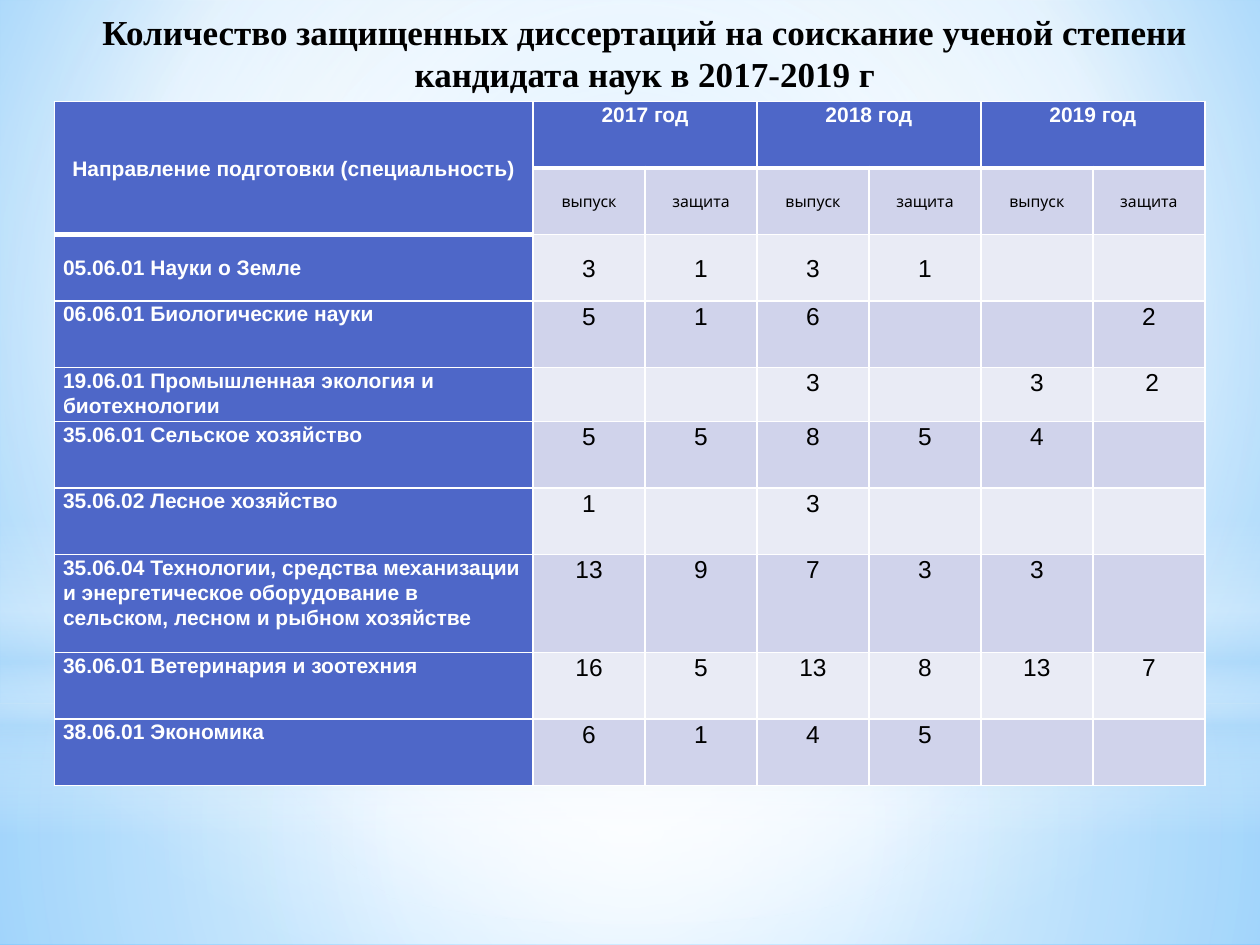
from dataclasses import dataclass

from lxml.etree import SubElement
from pptx import Presentation
from pptx.dml.color import RGBColor
from pptx.enum.shapes import MSO_SHAPE
from pptx.enum.text import MSO_ANCHOR, MSO_AUTO_SIZE, PP_ALIGN
from pptx.oxml.ns import qn
from pptx.util import Pt


@dataclass(frozen=True)
class Theme:
    """Colours, fonts and type sizes of the slide."""

    ink: str = "000000"
    white: str = "FFFFFF"
    header: str = "4E67C8"
    bands: tuple = ("E9EBF5", "D0D3EB")
    sky: str = "B4DCFA"
    sky_light: str = "9ED5FF"
    sky_deep: str = "5BB9FF"
    title_font: str = "Times New Roman"
    table_font: str = "Arial"
    caption_font: str = "Cabin"
    title_size: int = 20
    label_size: int = 12
    caption_size: int = 9
    value_size: int = 14
    thin: int = 1
    thick: int = 3


def write(frame, text, font, size, color, bold=False, align=PP_ALIGN.CENTER, spacing=None):
    """Put one formatted paragraph into a text frame."""
    para = frame.paragraphs[0]
    para.alignment = align
    para.line_spacing = spacing
    span = para.add_run()
    span.text = text
    span.font.name = font
    span.font.size = Pt(size)
    span.font.bold = bold
    span.font.color.rgb = RGBColor.from_string(color)


def paint_gradient(element, stops, focus=None):
    """Refill an element's gradient, circular around focus or else vertical."""
    gradient = element.find(".//" + qn("a:gradFill"))
    for child in list(gradient):
        gradient.remove(child)
    stop_list = SubElement(gradient, qn("a:gsLst"))
    for position, color, opacity in stops:
        stop = SubElement(stop_list, qn("a:gs"), pos=str(position * 1000))
        shade = SubElement(stop, qn("a:srgbClr"), val=color)
        if opacity < 100:
            SubElement(shade, qn("a:alpha"), val=str(opacity * 1000))
    if focus:
        path = SubElement(gradient, qn("a:path"), path="circle")
        edges = {side: str(share * 1000) for side, share in zip("ltrb", focus)}
        SubElement(path, qn("a:fillToRect"), **edges)
    else:
        SubElement(gradient, qn("a:lin"), ang="5400000", scaled="0")


class Painter:
    """Draws styled elements on the current slide."""

    def __init__(self, page, theme):
        """Keep the slide and its theme."""
        self.page = page
        self.theme = theme

    def background(self, stops, focus):
        """Fill the slide background with a circular gradient."""
        self.page.background.fill.gradient()
        paint_gradient(self.page.element, stops, focus)

    def glow(self, kind, left, top, width, height, stops, focus=None):
        """Add a borderless shape with a translucent gradient."""
        shape = self.page.shapes.add_shape(kind, Pt(left), Pt(top), Pt(width), Pt(height))
        shape.shadow.inherit = False
        shape.line.fill.background()
        shape.fill.gradient()
        paint_gradient(shape.element, stops, focus)

    def title(self, text, left, top, width, height):
        """Place the title placeholder in front of the backdrop."""
        box = self.page.shapes.title
        box.left, box.top, box.width, box.height = Pt(left), Pt(top), Pt(width), Pt(height)
        box.element.getparent().append(box.element)
        frame = box.text_frame
        frame.word_wrap = True
        frame.auto_size = MSO_AUTO_SIZE.SHAPE_TO_FIT_TEXT
        frame.vertical_anchor = MSO_ANCHOR.MIDDLE
        write(frame, text, self.theme.title_font, self.theme.title_size, self.theme.ink, bold=True)

    def borders(self, cell, top, bottom):
        """Draw white cell borders with the given top and bottom widths."""
        properties = cell._tc.get_or_add_tcPr()
        widths = {"lnL": self.theme.thin, "lnR": self.theme.thin, "lnT": top, "lnB": bottom}
        for tag, width in widths.items():
            line = SubElement(properties, qn("a:" + tag), w=str(Pt(width)))
            fill = SubElement(line, qn("a:solidFill"))
            SubElement(fill, qn("a:srgbClr"), val=self.theme.white)

    def cell(self, cell, row, column, text):
        """Style and fill one cell by its place in the table."""
        theme = self.theme
        header_rows = 2 if column == 0 else 1
        is_label = row < header_rows or column == 0
        self.borders(
            cell,
            top=theme.thick if row == header_rows else theme.thin,
            bottom=theme.thick if row < header_rows else theme.thin,
        )
        cell.fill.solid()
        cell.fill.fore_color.rgb = RGBColor.from_string(
            theme.header if is_label else theme.bands[row % 2]
        )
        cell.margin_left = cell.margin_right = Pt(5)
        cell.margin_top = cell.margin_bottom = 0
        is_middle = row in (1, 2) or (row, column) == (0, 0)
        cell.vertical_anchor = MSO_ANCHOR.MIDDLE if is_middle else MSO_ANCHOR.TOP
        if not text:
            return
        if is_label:
            font, size, color = theme.table_font, theme.label_size, theme.white
        elif row == 1:
            font, size, color = theme.caption_font, theme.caption_size, theme.ink
        else:
            font, size, color = theme.table_font, theme.value_size, theme.ink
        align = PP_ALIGN.CENTER
        if column == 0 and row > 1:
            align = PP_ALIGN.JUSTIFY if row == 2 else PP_ALIGN.LEFT
        write(cell.text_frame, text, font, size, color, bold=is_label, align=align, spacing=1.07)

    def table(self, rows, left, top, widths, heights):
        """Add the table with its two-level header."""
        frame = self.page.shapes.add_table(
            len(rows), len(widths), Pt(left), Pt(top), Pt(sum(widths)), Pt(sum(heights))
        )
        table = frame.table
        for column, width in zip(table.columns, widths):
            column.width = Pt(width)
        for line, height in zip(table.rows, heights):
            line.height = Pt(height)
        for row, texts in enumerate(rows):
            for column, text in enumerate(texts):
                self.cell(table.cell(row, column), row, column, text)
        table.cell(0, 0).merge(table.cell(1, 0))
        for column in range(1, len(widths), 2):
            table.cell(0, column).merge(table.cell(0, column + 1))


ROWS = [
    ["Направление подготовки (специальность)", "2017 год", "", "2018 год", "", "2019 год", ""],
    [""] + ["выпуск", "защита"] * 3,
    ["05.06.01 Науки о Земле", "3", "1", "3", "1", "", ""],
    ["06.06.01 Биологические науки", "5", "1", "6", "", "", "2"],
    ["19.06.01 Промышленная экология и биотехнологии", "", "", "3", "", "3", " 2"],
    ["35.06.01 Сельское хозяйство", "5", "5", "8", "5", "4", ""],
    ["35.06.02 Лесное хозяйство", "1", "", "3", "", "", ""],
    ["35.06.04 Технологии, средства механизации и энергетическое оборудование в "
     "сельском, лесном и рыбном хозяйстве", "13", "9", "7", "3", "3", ""],
    ["36.06.01 Ветеринария и зоотехния", "16", "5", "13", "8", "13", "7"],
    ["38.06.01 Экономика", "6", "1", "4", "5", "", ""],
]


def main():
    """Build the slide and save it."""
    deck = Presentation()
    deck.slide_width, deck.slide_height = Pt(720), Pt(540)
    theme = Theme()
    painter = Painter(deck.slides.add_slide(deck.slide_layouts[5]), theme)
    white, sky = theme.white, theme.sky
    center = (50, 50, 50, 50)
    painter.background(
        [(0, theme.sky_light, 100), (60, white, 100), (100, theme.sky_deep, 100)], (20, 10, 20, 60)
    )
    painter.glow(MSO_SHAPE.RECTANGLE, 0, 402, 720, 138,
                 [(0, white, 91), (37, white, 76), (100, sky, 79)], center)
    painter.glow(MSO_SHAPE.RECTANGLE, 0, 0, 720, 402,
                 [(0, white, 89), (48, white, 62), (100, sky, 79)], center)
    painter.glow(MSO_SHAPE.RECTANGLE, 0, 297, 720, 180,
                 [(0, white, 0), (29, white, 30), (45, sky, 40),
                  (55, white, 26), (65, sky, 60), (100, white, 0)])
    painter.glow(MSO_SHAPE.OVAL, 0, 126, 720, 402, [(0, white, 100), (56, white, 0)], center)
    painter.title("Количество защищенных диссертаций на соискание ученой степени "
                  "кандидата наук в 2017-2019 г", 8.5, 2, 720, 55.5)
    painter.table(ROWS, 31, 58, [273.6] + [64] * 6, [38] * 4 + [31, 38, 38, 56, 38, 38])
    deck.save("out.pptx")


if __name__ == "__main__":
    main()
